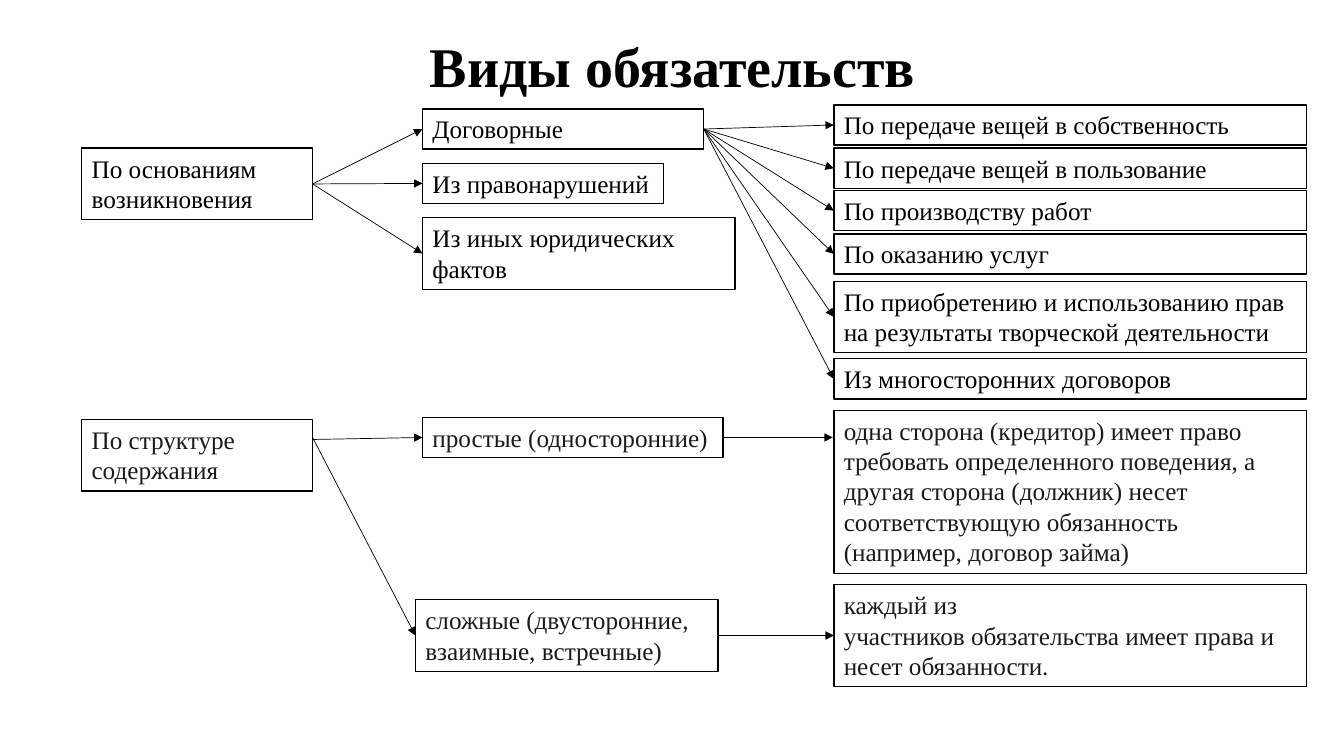
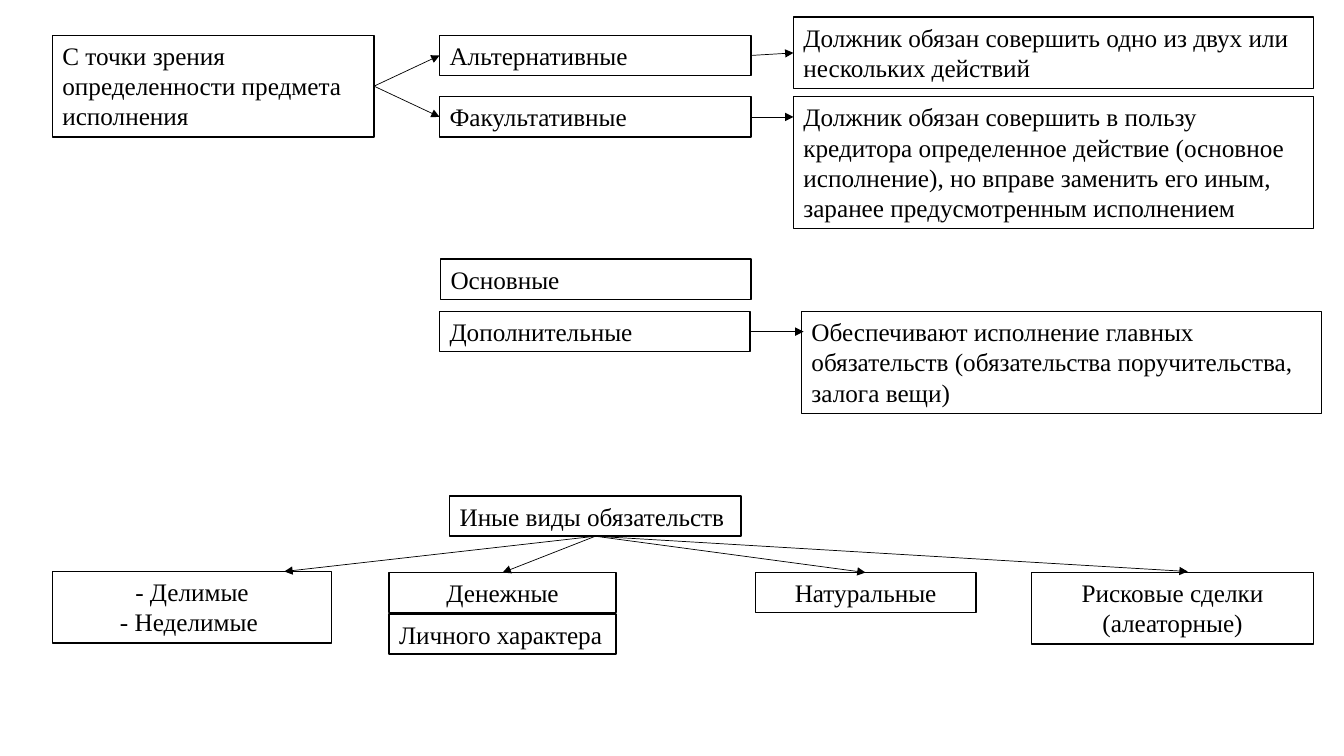
from dataclasses import dataclass
from typing import NamedTuple

from lxml.etree import SubElement
from pptx import Presentation
from pptx.dml.color import RGBColor
from pptx.enum.shapes import MSO_CONNECTOR, MSO_SHAPE
from pptx.enum.text import MSO_ANCHOR, MSO_AUTO_SIZE, PP_ALIGN
from pptx.oxml.ns import qn
from pptx.util import Emu, Pt

PX = 9144  # 100 px to the inch
TOP, LEFT, BOTTOM, RIGHT = range(4)


@dataclass(frozen=True)
class Theme:
    font: str = "Times New Roman"
    black: RGBColor = RGBColor(0, 0, 0)
    soft_black: RGBColor = RGBColor(0x1A, 0x1A, 0x1A)
    white: RGBColor = RGBColor(255, 255, 255)
    title_size: int = 40
    body_size: int = 18
    box_line: float = 1
    arrow_line: float = 0.5


THEME = Theme()


class Box(NamedTuple):
    left: int
    top: int
    width: int
    lines: int
    text: str
    color: RGBColor = THEME.black
    align: PP_ALIGN = PP_ALIGN.LEFT


def write(shape, text, *, size=THEME.body_size, color=THEME.black, bold=False,
          align=PP_ALIGN.LEFT, anchor=MSO_ANCHOR.TOP, spacing=1.0,
          auto_size=MSO_AUTO_SIZE.SHAPE_TO_FIT_TEXT):
    """Fill the shape with text, one paragraph per line of the string."""
    frame = shape.text_frame
    frame.word_wrap = True
    frame.auto_size = auto_size
    frame.vertical_anchor = anchor
    frame.text = text
    for para in frame.paragraphs:
        para.alignment = align
        para.line_spacing = spacing
        for span in para.runs:
            span.font.name = THEME.font
            span.font.size = Pt(size)
            span.font.bold = bold
            span.font.color.rgb = color


def draw_arrow(page, shapes, start, end):
    """Draw from start to end, each a (box name, side) pair or an (x, y) point."""
    points = [(0, 0) if spot[0] in shapes else spot for spot in (start, end)]
    arrow = page.shapes.add_connector(
        MSO_CONNECTOR.STRAIGHT, *(Emu(value * PX) for point in points for value in point))
    if start[0] in shapes:
        arrow.begin_connect(shapes[start[0]], start[1])
    if end[0] in shapes:
        arrow.end_connect(shapes[end[0]], end[1])
    arrow.line.color.rgb = THEME.black
    arrow.line.width = Pt(THEME.arrow_line)
    SubElement(arrow.line._get_or_add_ln(), qn("a:tailEnd"), type="triangle")
    SubElement(arrow._element.spPr, qn("a:effectLst"))


SOFT = THEME.soft_black
CENTER = PP_ALIGN.CENTER

kinds_boxes = {
    "grounds": Box(81, 147, 229, 2, "По основаниям возникновения"),
    "contract": Box(419, 108, 279, 1, "Договорные"),
    "offence": Box(419, 162, 239, 1, "Из правонарушений"),
    "other facts": Box(419, 216, 310, 2, "Из иных юридических фактов"),
    "ownership": Box(827, 104, 469, 1, "По передаче вещей в собственность"),
    "use": Box(827, 147, 469, 1, "По передаче вещей в пользование"),
    "works": Box(827, 189, 469, 1, "По производству работ"),
    "services": Box(827, 232, 469, 1, "По оказанию услуг"),
    "creative": Box(827, 279, 469, 2, "По приобретению и использованию прав "
                    "на результаты творческой деятельности"),
    "multilateral": Box(827, 356, 469, 1, "Из многосторонних договоров"),
    "structure": Box(81, 416, 229, 2, "По структуре содержания", SOFT),
    "simple": Box(419, 414, 298, 1, "простые (односторонние)", SOFT),
    "one party": Box(827, 407, 469, 5, "одна сторона (кредитор) имеет право требовать "
                     "определенного поведения, а другая сторона (должник) несет "
                     "соответствующую обязанность (например, договор займа)", SOFT),
    "complex": Box(412, 595, 300, 2, "сложные (двусторонние, взаимные, встречные)", SOFT),
    "each party": Box(827, 580, 469, 3, "каждый из\nучастников обязательства имеет права "
                      "и несет обязанности.", SOFT),
}
kinds_arrows = [
    *((("grounds", RIGHT), (name, LEFT)) for name in ("contract", "offence", "other facts")),
    *((("contract", RIGHT), (name, LEFT)) for name in (
        "ownership", "use", "works", "services", "creative", "multilateral")),
    ((310, 436), ("simple", LEFT)),
    ((310, 434), ("complex", LEFT)),
    (("simple", RIGHT), (826, 434)),
    (("complex", RIGHT), ("each party", LEFT)),
]

more_boxes = {
    "certainty": Box(52, 35, 319, 3, "С точки зрения определенности предмета исполнения"),
    "alternative": Box(436, 35, 309, 1, "Альтернативные"),
    "optional": Box(436, 96, 309, 1, "Факультативные"),
    "one of several": Box(787, 17, 516, 2, "Должник обязан совершить одно из двух или "
                          "нескольких действий"),
    "replacement": Box(787, 96, 516, 4, "Должник обязан совершить в пользу кредитора "
                       "определенное действие (основное исполнение), но вправе заменить "
                       "его иным, заранее предусмотренным исполнением"),
    "main": Box(437, 257, 308, 1, "Основные"),
    "additional": Box(436, 309, 308, 1, "Дополнительные"),
    "security": Box(795, 309, 516, 3, "Обеспечивают исполнение главных обязательств "
                    "(обязательства поручительства, залога вещи)"),
    "other kinds": Box(446, 492, 289, 1, "Иные виды обязательств"),
    "divisible": Box(52, 567, 277, 2, "- Делимые\n- Неделимые ", align=CENTER),
    "monetary": Box(386, 568, 225, 1, "Денежные", align=CENTER),
    "personal": Box(386, 609, 225, 1, "Личного характера"),
    "natural": Box(749, 568, 219, 1, "Натуральные", align=CENTER),
    "risky": Box(1023, 568, 280, 2, "Рисковые сделки (алеаторные)", align=CENTER),
}
more_arrows = [
    *((("certainty", RIGHT), (name, LEFT)) for name in ("alternative", "optional")),
    (("alternative", RIGHT), ("one of several", LEFT)),
    (("optional", RIGHT), (787, 116)),
    (("additional", RIGHT), (797, 329)),
    *((("other kinds", BOTTOM), end) for end in (
        (282, 567), ("monetary", TOP), ("natural", TOP), (1178, 567))),
]

deck = Presentation()
deck.slide_width, deck.slide_height = Emu(1333 * PX), Emu(750 * PX)
title_only, blank = deck.slide_layouts[5], deck.slide_layouts[6]

for title_text, boxes, arrows in (
    ("Виды обязательств", kinds_boxes, kinds_arrows),
    (None, more_boxes, more_arrows),
):
    page = deck.slides.add_slide(title_only if title_text else blank)
    page.background.fill.solid()
    page.background.fill.fore_color.rgb = THEME.white
    if title_text:
        title = page.shapes.title
        title.left, title.top, title.width, title.height = (
            Emu(value * PX) for value in (92, 29, 1150, 80))
        write(title, title_text, size=THEME.title_size, bold=True, align=CENTER,
              anchor=MSO_ANCHOR.MIDDLE, spacing=0.9, auto_size=MSO_AUTO_SIZE.NONE)

    shapes = {}
    for name, box in boxes.items():
        height = round(10.1 + 30.3 * box.lines)
        shape = page.shapes.add_shape(MSO_SHAPE.RECTANGLE, *(
            Emu(value * PX) for value in (box.left, box.top, box.width, height)))
        shape.shadow.inherit = False
        shape.fill.solid()
        shape.fill.fore_color.rgb = THEME.white
        shape.line.color.rgb = THEME.black
        shape.line.width = Pt(THEME.box_line)
        write(shape, box.text, color=box.color, align=box.align)
        shapes[name] = shape

    for start, end in arrows:
        draw_arrow(page, shapes, start, end)

deck.save("out.pptx")
